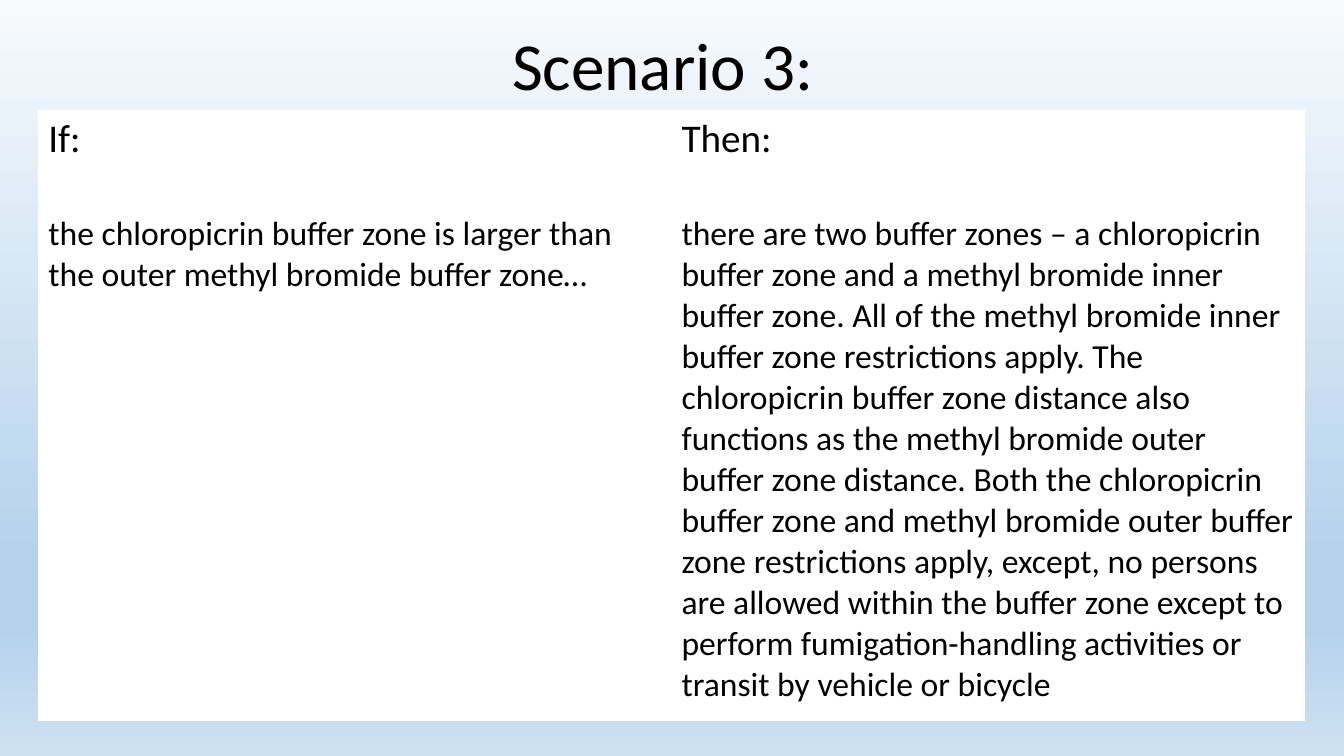
from lxml import etree
from pptx import Presentation
from pptx.dml.color import RGBColor
from pptx.enum.text import MSO_ANCHOR, PP_ALIGN
from pptx.oxml.ns import qn
from pptx.util import Inches, Pt

TOP = MSO_ANCHOR.TOP
LEFT, CENTER = PP_ALIGN.LEFT, PP_ALIGN.CENTER

SLIDE_W, SLIDE_H = Inches(13.33), Inches(7.5)
FONT = "Calibri"
COLORS = {
    "text": "000000",
    "panel": "FFFFFF",
    "sky_top": "F7FAFD",
    "sky_band": "B5D2EC",
    "sky_bottom": "CEE1F2",
}
SKY_STOPS = [(0, "sky_top"), (74, "sky_band"), (83, "sky_band"), (100, "sky_bottom")]

COLUMN_W = Inches(6.28)
ROW_HEIGHTS = [Inches(0.98), Inches(5.08)]
ROW_SIZES = [28, 24]
SCENARIO = [
    ["If:", "Then:"],
    [
        "the chloropicrin buffer zone is larger than the outer methyl bromide buffer zone…",
        "there are two buffer zones – a chloropicrin buffer zone and a methyl bromide inner "
        "buffer zone. All of the methyl bromide inner buffer zone restrictions apply. The "
        "chloropicrin buffer zone distance also functions as the methyl bromide outer buffer "
        "zone distance. Both the chloropicrin buffer zone and methyl bromide outer buffer zone "
        "restrictions apply, except, no persons are allowed within the buffer zone except to "
        "perform fumigation-handling activities or transit by vehicle or bicycle",
    ],
]


def write(frame, text, size, color="text", align=LEFT):
    frame.word_wrap = True
    paragraph = frame.paragraphs[0]
    paragraph.alignment = align
    run = paragraph.add_run()
    run.text = text
    run.font.name = FONT
    run.font.size = Pt(size)
    run.font.bold = False
    run.font.color.rgb = RGBColor.from_string(COLORS[color])


def paint_sky(slide):
    fill = slide.background.fill
    fill.gradient()
    fill.gradient_angle = 270
    stops = next(slide.element.iter(qn("a:gsLst")))
    for stop in list(stops):
        stops.remove(stop)
    for percent, color in SKY_STOPS:
        stop = etree.SubElement(stops, qn("a:gs"), pos=str(percent * 1000))
        etree.SubElement(stop, qn("a:srgbClr"), val=COLORS[color])


def add_title(slide, text):
    title = slide.shapes.add_textbox(Inches(4.98), Inches(0.18), Inches(3.38), Inches(0.91))
    write(title.text_frame, text, size=48)


def add_scenario_table(slide, rows):
    table = slide.shapes.add_table(
        len(rows), len(rows[0]), Inches(0.38), Inches(1.09),
        COLUMN_W * len(rows[0]), sum(ROW_HEIGHTS),
    ).table
    table.first_row = False
    table.horz_banding = False
    style = next(table._tbl.iter(qn("a:tableStyleId")))
    style.text = "{2D5ABB26-0587-4C30-8999-92F81FD0307C}"
    for column in table.columns:
        column.width = COLUMN_W
    for r, texts in enumerate(rows):
        table.rows[r].height = ROW_HEIGHTS[r]
        for c, text in enumerate(texts):
            cell = table.cell(r, c)
            cell.fill.solid()
            cell.fill.fore_color.rgb = RGBColor.from_string(COLORS["panel"])
            cell.vertical_anchor = TOP
            write(cell.text_frame, text, size=ROW_SIZES[r])


def main():
    deck = Presentation()
    deck.slide_width, deck.slide_height = SLIDE_W, SLIDE_H
    slide = deck.slides.add_slide(deck.slide_layouts[6])
    paint_sky(slide)
    add_title(slide, "Scenario 3:")
    add_scenario_table(slide, SCENARIO)
    deck.save("out.pptx")


if __name__ == "__main__":
    main()
